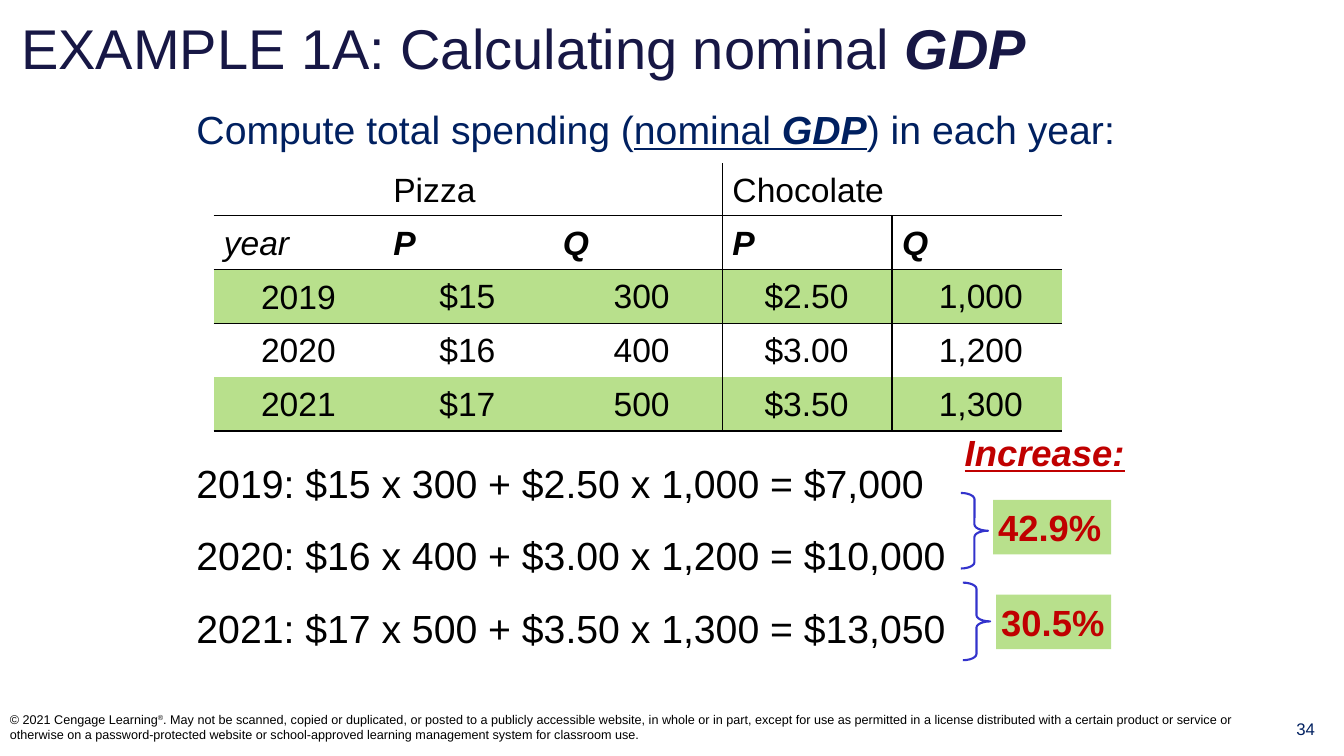
import pptx
import pptx.util
import pptx.dml.color
import pptx.enum.shapes
import pptx.enum.text
import pptx.oxml
import pptx.oxml.ns

Pt = pptx.util.Pt
Inches = pptx.util.Inches
ALIGN = pptx.enum.text.PP_ALIGN
ANCHOR = pptx.enum.text.MSO_ANCHOR
SHAPE = pptx.enum.shapes.MSO_SHAPE

SLIDE_W, SLIDE_H = Inches(13.33), Inches(7.5)
FONT = "Arial"
COLORS = {
    "title": "171745",
    "navy": "002060",
    "black": "000000",
    "red": "C00000",
    "green": "B8E08C",
    "brace": "3333CC",
}
NO_STYLE = "{2D5ABB26-0587-4C30-8999-92F81FD0307C}"

HEADERS = [["", "Pizza", "", "Chocolate", ""], ["year", "P", "Q", "P", "Q"]]
DATA = [
    ["2019", "$15 ", "300", "$2.50 ", "1,000"],
    ["2020", "$16 ", "400", "$3.00 ", "1,200"],
    ["2021", "$17 ", "500", "$3.50 ", "1,300"],
]
FORMULAS = [
    "2019: $15 x 300 + $2.50 x 1,000 = $7,000",
    "2020: $16 x 400 + $3.00 x 1,200 = $10,000",
    "2021: $17 x 500 + $3.50 x 1,300 = $13,050",
]
COPYRIGHT = (
    ". May not be scanned, copied or duplicated, or posted to a publicly accessible website, "
    "in whole or in part, except for use as permitted in a license distributed with a certain "
    "product or service or otherwise on a password-protected website or school-approved "
    "learning management system for classroom use."
)


def rgb(name):
    return pptx.dml.color.RGBColor.from_string(COLORS[name])


def area(left, top, width, height):
    """Turn percentages of the slide into lengths."""
    return (int(SLIDE_W * left / 100), int(SLIDE_H * top / 100),
            int(SLIDE_W * width / 100), int(SLIDE_H * height / 100))


def add_run(p, text, size, color, bold=False, italic=False, underline=False):
    r = p.add_run()
    r.text = text
    f = r.font
    f.name, f.size = FONT, Pt(size)
    f.bold, f.italic, f.underline = bold, italic, underline
    f.color.rgb = rgb(color)
    return r


def add_text(s, place, anchor=ANCHOR.TOP):
    """Add a wrapping text box and return its text frame."""
    tf = s.shapes.add_textbox(*area(*place)).text_frame
    tf.word_wrap = True
    tf.vertical_anchor = anchor
    return tf


def add_title(s):
    sp = s.shapes.title
    sp.left, sp.top, sp.width, sp.height = area(0.83, 1.47, 97.5, 9.6)
    tf = sp.text_frame
    tf.word_wrap = False
    tf.vertical_anchor = ANCHOR.MIDDLE
    p = tf.paragraphs[0]
    p.alignment = ALIGN.LEFT
    add_run(p, "EXAMPLE 1A: Calculating nominal ", 40, "title")
    add_run(p, "GDP", 40, "title", bold=True, italic=True)


def set_borders(cell, sides):
    """Draw thin black lines on the given sides, listed in L, R, T, B order."""
    tc_pr = cell._tc.get_or_add_tcPr()
    for side in sides:
        tc_pr.append(pptx.oxml.parse_xml(
            f'<a:ln{side} {pptx.oxml.ns.nsdecls("a")} w="12700"><a:solidFill>'
            f'<a:srgbClr val="{COLORS["black"]}"/></a:solidFill></a:ln{side}>'))


def add_price_table(s):
    rows = HEADERS + DATA
    n_head, n_cols = len(HEADERS), len(rows[0])
    heights = [6.67] + [7.12] * (len(rows) - 1)
    frame = s.shapes.add_table(len(rows), n_cols, *area(15.9, 21.6, 63.1, sum(heights)))
    table = frame.table
    tbl_pr = table._tbl.tblPr
    tbl_pr.find(pptx.oxml.ns.qn("a:tableStyleId")).text = NO_STYLE
    table.first_row = table.horz_banding = False
    for row, height in zip(table.rows, heights):
        row.height = int(SLIDE_H * height / 100)

    for i, values in enumerate(rows):
        for j, text in enumerate(values):
            cell = table.cell(i, j)
            # Lines: product divider, header rules and table bottom
            sides = ["L"] if j == 3 else ["R"] if j == 2 else []
            if 0 < i <= n_head:
                sides.append("T")
            if i < n_head or i == len(rows) - 1:
                sides.append("B")
            set_borders(cell, sides)
            # Banding on every other data row
            if i >= n_head and (i - n_head) % 2 == 0:
                cell.fill.solid()
                cell.fill.fore_color.rgb = rgb("green")
            else:
                cell.fill.background()
            cell.vertical_anchor = ANCHOR.MIDDLE
            p = cell.text_frame.paragraphs[0]
            p.alignment = ALIGN.CENTER if i >= n_head else ALIGN.LEFT
            if i < n_head or j == 0:
                p.line_spacing = 1.05
            else:
                cell.margin_left = Inches(0.09)
                cell.margin_top = cell.margin_right = Inches(0.01)
                cell.margin_bottom = 0
            if text:
                add_run(p, text, 24, "black", bold=i == 1 and j > 0, italic=i == 1)

    for j in (1, 3):
        table.cell(0, j).merge(table.cell(0, j + 1))


def add_increase(s, text, label_place, brace_place):
    """Add a percentage label with the brace that points to it."""
    label = s.shapes.add_shape(SHAPE.RECTANGLE, *area(*label_place))
    label.shadow.inherit = False
    label.fill.solid()
    label.fill.fore_color.rgb = rgb("green")
    label.line.fill.background()
    tf = label.text_frame
    tf.word_wrap = True
    tf.vertical_anchor = ANCHOR.MIDDLE
    tf.margin_left = tf.margin_right = tf.margin_top = tf.margin_bottom = Inches(0.05)
    p = tf.paragraphs[0]
    p.alignment = ALIGN.LEFT
    add_run(p, text, 26, "red", bold=True)

    brace = s.shapes.add_shape(SHAPE.RIGHT_BRACE, *area(*brace_place))
    brace.shadow.inherit = False
    brace.fill.background()
    brace.line.color.rgb = rgb("brace")
    brace.line.width = Pt(1.5)
    brace.adjustments[0] = 0.23


def main():
    prs = pptx.Presentation()
    prs.slide_width, prs.slide_height = SLIDE_W, SLIDE_H
    s = prs.slides.add_slide(prs.slide_layouts[5])
    add_title(s)

    # Footer
    p = add_text(s, (94.3, 94.4, 5.7, 5.47)).paragraphs[0]
    p.alignment = ALIGN.CENTER
    add_run(p, "34", 12, "navy")
    p = add_text(s, (0, 92.27, 95.87, 7.73), ANCHOR.MIDDLE).paragraphs[0]
    add_run(p, "© 2021 Cengage Learning", 9, "black")
    mark = add_run(p, "®", 9, "black")
    mark.font._element.set("baseline", "30000")
    add_run(p, COPYRIGHT, 9, "black")

    # Task and price table
    p = add_text(s, (13.88, 13.33, 72.5, 7.33)).paragraphs[0]
    add_run(p, "Compute total spending (", 28, "navy")
    add_run(p, "nominal ", 28, "navy", underline=True)
    add_run(p, "GDP", 28, "navy", bold=True, italic=True, underline=True)
    add_run(p, ") in each year:", 28, "navy")
    add_price_table(s)

    # Spending in each year
    tf = add_text(s, (13.88, 60.13, 57.5, 27))
    for i, formula in enumerate(FORMULAS):
        p = tf.add_paragraph() if i else tf.paragraphs[0]
        if i:
            p.space_before = Pt(18)
        add_run(p, formula, 28, "black")

    # Growth between years
    p = add_text(s, (71.04, 56.27, 15, 7.07)).paragraphs[0]
    add_run(p, "Increase:", 26, "red", bold=True, italic=True, underline=True)
    add_increase(s, "42.9%", (73.89, 66.13, 8.78, 7.2), (71.49, 65.2, 2.03, 10))
    add_increase(s, "30.5%", (74.12, 78.67, 8.55, 7.2), (71.64, 77.07, 2.03, 10.27))

    prs.save("out.pptx")


if __name__ == "__main__":
    main()
